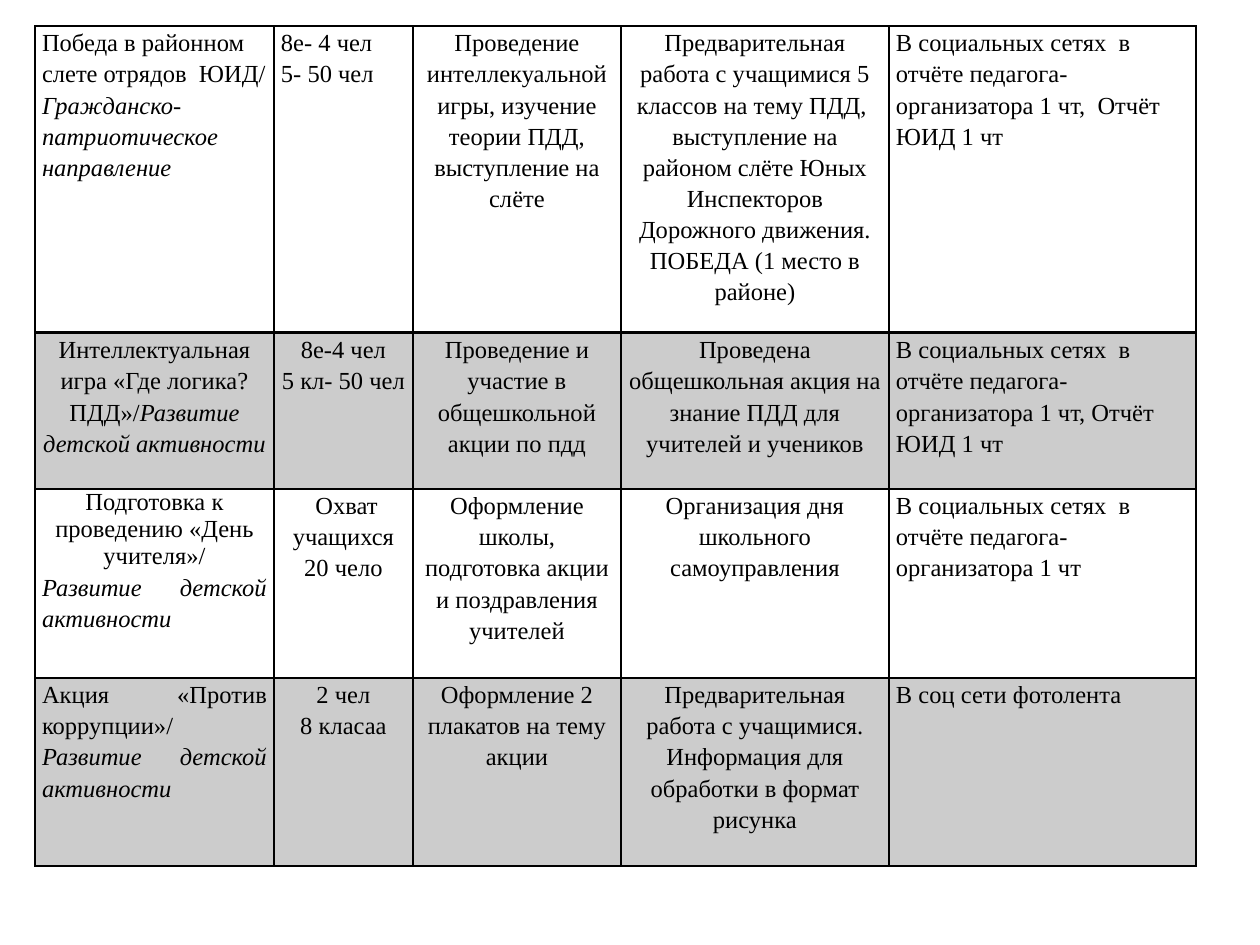
import pptx
import pptx.util
import pptx.dml.color
import pptx.enum.text
import pptx.oxml

SCALE = 914400 / 126
ALIGN = pptx.enum.text.PP_ALIGN
LEFT, MID, JUST = ALIGN.LEFT, ALIGN.CENTER, ALIGN.JUSTIFY
NS = 'xmlns:a="http://schemas.openxmlformats.org/drawingml/2006/main"'

WIDTHS = [239, 139, 208, 268, 307]
HEIGHTS = [307, 156, 189, 188]
SIDES = [MID, MID, MID, MID, LEFT]
SHADED = {1, 3}

# A cell is a list of paragraphs: text, or (text, alignment, line spacing).
# An asterisk switches italics on or off.
ROWS = [
    [
        [("Победа в районном слете отрядов  ЮИД/", LEFT, 1.15),
         ("*Гражданско-патриотическое  направление", JUST, 1.15)],
        [("8е- 4 чел", LEFT, 1.15), ("5- 50 чел", LEFT, 1.15)],
        ["Проведение интеллекуальной игры, изучение теории ПДД, "
         "выступление на слёте"],
        ["Предварительная работа с учащимися 5 классов на тему ПДД,  "
         "выступление на районом слёте Юных Инспекторов Дорожного движения.",
         "ПОБЕДА (1 место в районе)"],
        ["В социальных сетях  в отчёте педагога-организатора 1 чт,  "
         "Отчёт ЮИД 1 чт"],
    ],
    [
        ["Интеллектуальная игра «Где логика? ПДД»/"
         "*Развитие детской активности"],
        ["8е-4 чел", "5 кл- 50 чел"],
        ["Проведение и участие в общешкольной акции по пдд"],
        ["Проведена общешкольная акция на знание ПДД для учителей и учеников"],
        ["В социальных сетях  в отчёте педагога-организатора 1 чт, "
         "Отчёт ЮИД 1 чт"],
    ],
    [
        [("Подготовка к проведению «День учителя»/", MID, 1.0),
         ("*Развитие детской активности", JUST, 1.15)],
        [" Охват учащихся 20 чело"],
        ["Оформление школы, подготовка акции и поздравления учителей"],
        ["Организация дня школьного самоуправления"],
        ["В социальных сетях  в отчёте педагога-организатора 1 чт"],
    ],
    [
        [("Акция «Против коррупции»/ *Развитие детской активности",
          JUST, 1.15)],
        ["2 чел", "8 класаа"],
        ["Оформление 2 плакатов на тему акции"],
        ["Предварительная работа с учащимися. Информация для обработки "
         "в формат рисунка"],
        ["В соц сети фотолента"],
    ],
]


def px(num):
    return pptx.util.Emu(round(num * SCALE))


def color(code):
    return pptx.dml.color.RGBColor.from_string(code)


class Page:
    font = "Times New Roman"
    size = 14
    ink = "000000"

    def __init__(self, slide):
        self.slide = slide

    def table(self, left, top):
        frame = self.slide.shapes.add_table(
            len(HEIGHTS), len(WIDTHS), px(left), px(top),
            px(sum(WIDTHS)), px(sum(HEIGHTS)))
        grid = frame.table
        grid.first_row = grid.horz_banding = False
        for col, width in zip(grid.columns, WIDTHS):
            col.width = px(width)
        for row, height in zip(grid.rows, HEIGHTS):
            row.height = px(height)
        for r, line in enumerate(ROWS):
            for c, paras in enumerate(line):
                cell = grid.cell(r, c)
                self.label(cell, paras, SIDES[c])
                self.shade(cell, r in SHADED)
                self.edge(cell, 2 if r == 1 else 1, 2 if r == 0 else 1)

    def label(self, cell, paras, side):
        cell.margin_left = cell.margin_right = px(7)
        cell.margin_top = cell.margin_bottom = 0
        frame = cell.text_frame
        for num, item in enumerate(paras):
            text, align, gap = (item, side, 1.15) if isinstance(item, str) else item
            para = frame.add_paragraph() if num else frame.paragraphs[0]
            para.alignment = align
            para.line_spacing = gap
            for turn, part in enumerate(text.split("*")):
                if part:
                    run = para.add_run()
                    run.text = part
                    run.font.name = self.font
                    run.font.size = pptx.util.Pt(self.size)
                    run.font.italic = turn % 2 == 1
                    run.font.color.rgb = color(self.ink)

    def shade(self, cell, dark):
        """Tint a dark cell with 20 % ink; leave the others clear."""
        if not dark:
            cell.fill.background()
            return
        cell.fill.solid()
        cell.fill.fore_color.rgb = color(self.ink)
        tint = cell._tc.tcPr.find(".//{*}srgbClr")
        tint.append(pptx.oxml.parse_xml(f'<a:alpha {NS} val="20000"/>'))

    def edge(self, cell, top, foot):
        """Draw the four borders, with widths in points."""
        props = cell._tc.get_or_add_tcPr()
        sides = {"lnL": 1, "lnR": 1, "lnT": top, "lnB": foot}
        for spot, (tag, width) in enumerate(sides.items()):
            props.insert(spot, pptx.oxml.parse_xml(
                f'<a:{tag} {NS} w="{width * 12700}"><a:solidFill>'
                f'<a:srgbClr val="{self.ink}"/></a:solidFill></a:{tag}>'))


def main():
    deck = pptx.Presentation()
    deck.slide_width, deck.slide_height = px(1260), px(945)
    page = Page(deck.slides.add_slide(deck.slide_layouts[6]))
    page.table(35, 26)
    deck.save("out.pptx")


if __name__ == "__main__":
    main()
